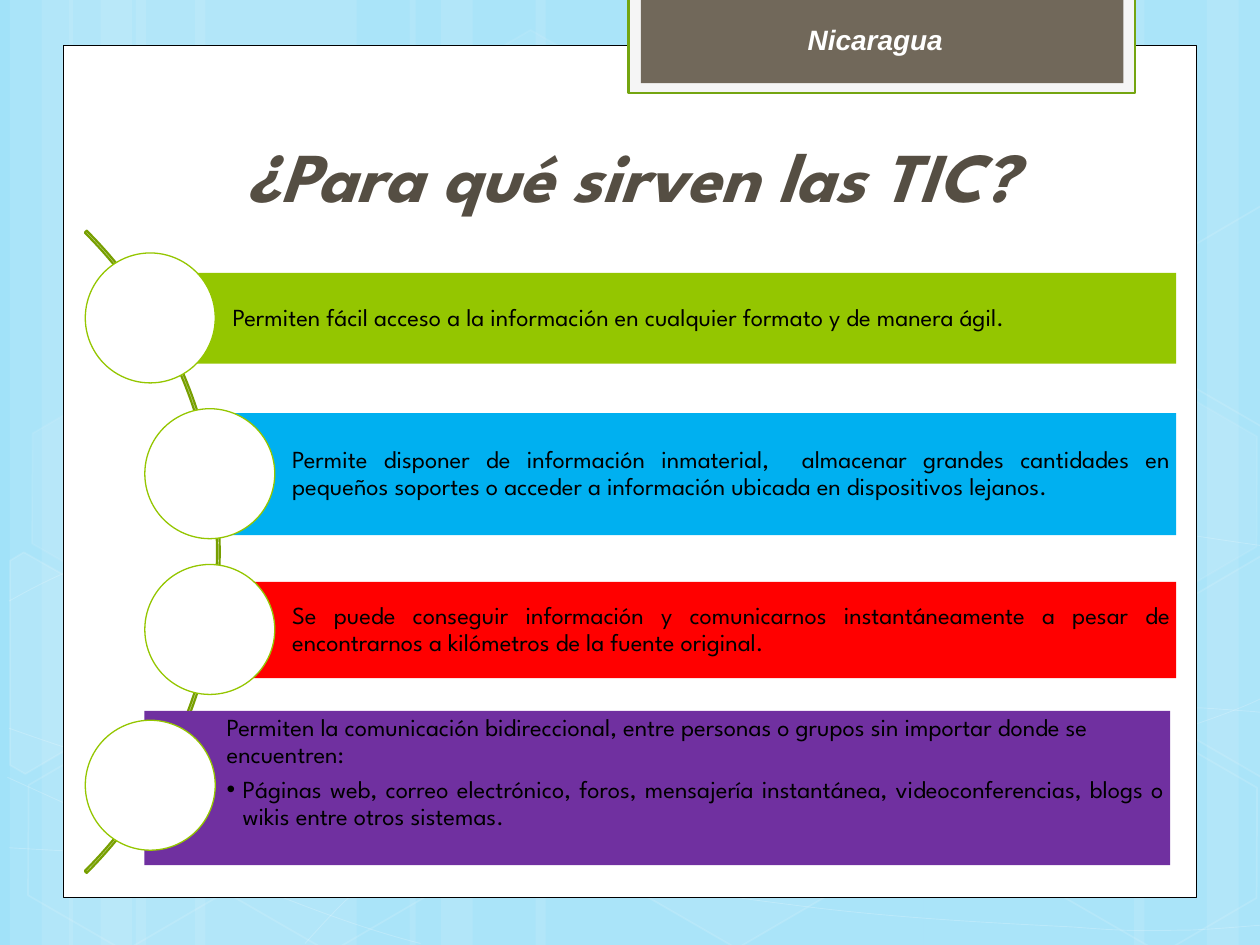
import math

from lxml import etree
from pptx import Presentation
from pptx import util as u
from pptx.dml.color import RGBColor
from pptx.enum import shapes, text
from pptx.oxml import ns

Cm, Pt = u.Cm, u.Pt
MSO, AL, ANC = shapes.MSO_SHAPE, text.PP_ALIGN, text.MSO_ANCHOR

COLORS = {
    "sky": "A1E2F9", "white": "FFFFFF", "black": "000000", "frame": "F5F5F5",
    "leaf": "74A510", "taupe": "71685A", "title": "554E43", "arc": "779F00",
    "green": "94C600", "blue": "00B0F0", "red": "FF0000", "purple": "7030A0",
}

STRIPES = [(x + dx, w) for dx in (0, 1.19)
           for x, w in ((2.74, 4.45), (0.2, 1.27), (0.84, 2.11))]
STRIPES += [(18.62, 4.45), (24.33, 1.27), (22.86, 2.11),
            (10.8, 7.82), (8.26, 1.27), (8.89, 2.11)]

CURVES = [
    [(0.18, 17.09), (1.55, 17.17), (2.92, 17.25), (4.83, 17.22), (6.73, 17.2),
     (9.09, 17.15), (11.63, 16.89), (14.17, 16.64), (17.78, 16.15),
     (20.12, 15.67), (22.43, 15.19), (24.82, 14.43), (25.58, 14)],
    [(0.18, 12.12), (0.91, 11.71), (1.65, 11.33), (3.07, 10.95), (4.52, 10.57),
     (6.58, 10.01), (8.81, 9.83), (11.07, 9.65), (13.82, 9.63),
     (16.61, 9.83), (19.41, 10.03), (24.05, 10.82), (25.58, 11.02)],
    [(0.15, 15.67), (3.23, 17.07), (6.27, 18.47), (8.48, 19.02)],
    [(0.18, 14.68), (0.97, 14.96), (1.78, 15.24), (3.25, 15.65), (4.72, 16.03),
     (6.93, 16.66), (9.07, 17.09), (11.18, 17.53), (13.84, 17.98),
     (15.95, 18.24), (18.06, 18.52), (20.32, 18.62), (21.67, 18.69),
     (22.99, 18.8), (23.34, 18.75), (24, 18.75), (24.66, 18.72),
     (25.12, 18.67), (25.58, 18.64)],
    [(6.15, 19.02), (6.6, 18.52), (7.06, 18.01), (7.67, 17.55), (8.28, 17.09),
     (9.14, 16.59), (9.86, 16.23), (10.57, 15.88), (11, 15.72),
     (11.94, 15.47), (12.85, 15.21), (14.55, 14.86), (15.44, 14.68),
     (16.36, 14.5), (16.48, 14.5), (17.27, 14.45), (18.06, 14.38),
     (19.3, 14.3), (20.17, 14.27), (21.06, 14.25), (22.5, 14.27),
     (22.5, 14.27), (23, 14.27), (23.6, 14.27), (24.21, 14.27),
     (24.66, 14.3), (25.1, 14.33), (25.32, 14.35), (25.55, 14.38),
     (25.48, 14.35), (25.55, 14.38)],
]

HEXAGONS = [(8.48, 0.91, 4, 8), (12.62, 14.96, 6, 12), (0.28, 15.01, 0, 12),
            (0.36, 7.92, 7, 8), (4.42, 15.04, 0, 12), (19.13, 11.51, 10, 12),
            (21.18, 15.06, 0, 12), (21.18, 7.98, 7, 8)]

CUT_HEXAGONS = [
    (10, (0.91, 13.59), [(0.2, 11.3), (0.48, 11.13), (2.44, 12.24),
                         (2.41, 14.48), (0.51, 15.6), (0.2, 15.42)]),
    (4, (25.02, 13.21), [(23.52, 12.32), (25.43, 11.2), (25.63, 11.33),
                         (25.63, 15.57), (25.45, 15.67), (23.52, 14.55)]),
    (0, (25.02, 6.12), [(23.52, 5.26), (25.43, 4.14), (25.65, 4.27),
                        (25.63, 8.51), (25.45, 8.61), (23.52, 7.49)]),
]

BARS = [
    ("green", (3.03, 5.5, 20.68, 1.83), 1.72, ANC.MIDDLE, AL.LEFT,
     "Permiten fácil acceso a la información en cualquier formato y de manera ágil."),
    ("blue", (4.23, 8.33, 19.48, 2.46), 2.92, ANC.MIDDLE, AL.JUSTIFY,
     "Permite disponer de información inmaterial,  almacenar grandes cantidades en "
     "pequeños soportes o acceder a información ubicada en dispositivos lejanos."),
    ("red", (4.23, 11.73, 19.48, 1.94), 2.92, ANC.MIDDLE, AL.JUSTIFY,
     "Se puede conseguir información y comunicarnos instantáneamente a pesar de "
     "encontrarnos a kilómetros de la fuente original."),
    ("purple", (2.91, 14.33, 20.68, 3.11), 1.72, ANC.TOP, AL.LEFT,
     "Permiten la comunicación bidireccional, entre personas o grupos sin importar "
     "donde se encuentren:"),
]
CHANNELS = ("Páginas web, correo electrónico, foros, mensajería instantánea, "
            "videoconferencias, blogs o wikis entre otros sistemas.")


def paint(fmt, color, alpha=100):
    """Give a fill format a solid colour with an opacity in percent."""
    fmt.solid()
    fmt.fore_color.rgb = RGBColor.from_string(COLORS[color])
    if alpha < 100:
        clr = fmt._xPr.find(ns.qn("a:solidFill"))[0]
        etree.SubElement(clr, ns.qn("a:alpha"), val=str(alpha * 1000))


def style(sp, fill=None, line=None, width=1, alpha=100, line_alpha=100):
    """Set fill and line of a shape and switch its shadow off."""
    sp.shadow.inherit = False
    for fmt, color, a in ((sp.fill, fill, alpha), (sp.line.fill, line, line_alpha)):
        if color and a:
            paint(fmt, color, a)
        else:
            fmt.background()
    if line:
        sp.line.width = Pt(width)
    return sp


def add_shape(s, kind, box, **look):
    """Add a preset shape in a box given in centimetres."""
    return style(s.shapes.add_shape(kind, *map(Cm, box)), **look)


def add_outline(s, points, closed, **look):
    """Add a freeform through points given in centimetres."""
    pts = [(Cm(x), Cm(y)) for x, y in points]
    fb = s.shapes.build_freeform(*pts[0], scale=1.0)
    fb.add_line_segments(pts[1:], close=closed)
    return style(fb.convert_to_shape(), **look)


def add_curve(s, nodes, **look):
    """Add a chain of cubic curves through nodes and their handles."""
    sp = add_outline(s, nodes, False, **look)
    lines = list(sp.element.iter(ns.qn("a:lnTo")))
    for i in range(0, len(lines), 3):
        curve = etree.Element(ns.qn("a:cubicBezTo"))
        lines[i].addprevious(curve)
        for ln in lines[i:i + 3]:
            curve.append(ln[0])
            ln.getparent().remove(ln)


def turn(points, center, degrees):
    """Rotate points about a center."""
    c, d = math.cos(math.radians(degrees)), math.sin(math.radians(degrees))
    cx, cy = center
    return [(cx + (x - cx) * c - (y - cy) * d, cy + (x - cx) * d + (y - cy) * c)
            for x, y in points]


def write(tf, content, size=14, font="League Spartan", color="black", bold=False,
          align=AL.LEFT, spacing=1.0, after=0, bullet=None, new=False):
    """Write one formatted paragraph into a text frame."""
    p = tf.add_paragraph() if new else tf.paragraphs[0]
    p.alignment, p.line_spacing, p.space_after = align, spacing, Pt(after)
    p.space_before = Pt(0)
    if bullet:
        p.level = 1
        pPr = p._p.get_or_add_pPr()
        pPr.set("marL", str(Cm(0.32)))
        pPr.set("indent", str(-Cm(0.32)))
        etree.SubElement(pPr, ns.qn("a:buFont"), typeface="Arial")
        etree.SubElement(pPr, ns.qn("a:buChar"), char=bullet)
    r = p.add_run()
    r.text = content
    r.font.size, r.font.name = Pt(size), font
    r.font.bold = r.font.italic = bold
    r.font.color.rgb = RGBColor.from_string(COLORS[color])


def add_backdrop(s):
    """Draw the sky with its stripes, curves and hexagons."""
    paint(s.background.fill, "sky")
    for x, w in STRIPES:
        add_shape(s, MSO.RECTANGLE, (x, 0, w, 19.05), fill="white", alpha=10)
    for nodes in CURVES:
        add_curve(s, nodes, line="white", width=0.5, line_alpha=20)
    for x, y, alpha, line_alpha in HEXAGONS:
        sp = add_shape(s, MSO.HEXAGON, (x, y, 4.45, 3.86), fill="white",
                       alpha=alpha, line="white", line_alpha=line_alpha)
        sp.adjustments[0] = 0.285
        sp.rotation = 30
    for alpha, center, points in CUT_HEXAGONS:
        sp = add_outline(s, turn(points, center, -30), True, fill="white",
                         alpha=alpha, line="white", line_alpha=12)
        sp.rotation = 30


def add_panel(s):
    """Draw the white panel and the tab at its top."""
    add_shape(s, MSO.RECTANGLE, (1.27, 0.91, 22.86, 17.19),
              fill="white", line="black", width=0.5)
    add_shape(s, MSO.RECTANGLE, (12.67, -0.05, 10.21, 1.93),
              fill="frame", line="leaf", width=1.25)
    add_shape(s, MSO.RECTANGLE, (12.92, -0.05, 9.73, 1.73), fill="taupe")


def add_title(s):
    """Place the title above the panel."""
    sp = s.shapes.title
    s.shapes.element.append(sp.element)
    sp.left, sp.top, sp.width, sp.height = map(Cm, (1.3, 1.93, 22.86, 2.57))
    tf = sp.text_frame
    tf.auto_size, tf.vertical_anchor = text.MSO_AUTO_SIZE.NONE, ANC.BOTTOM
    write(tf, "¿Para qué sirven las TIC?", size=40, color="title", bold=True,
          align=AL.CENTER, spacing=1.15, after=10)


def add_bars(s):
    """Draw the arc and the four bars with their circles."""
    arc = add_shape(s, MSO.BLOCK_ARC, (-13.88, 1.97, 18.31, 18.31),
                    line="arc", width=1.25)
    for i, value in enumerate((189, 27, 0.003)):
        arc.adjustments[i] = value
    for i, (color, box, circle_x, anchor, align, content) in enumerate(BARS):
        tf = add_shape(s, MSO.RECTANGLE, box, fill=color).text_frame
        tf.word_wrap, tf.vertical_anchor = True, anchor
        tf.margin_left = Cm(1.66)
        tf.margin_top = tf.margin_right = tf.margin_bottom = Cm(0.1)
        write(tf, content, align=align, spacing=0.9, after=4.9)
        if color == "purple":
            write(tf, CHANNELS, align=AL.JUSTIFY, spacing=0.9, after=2.1,
                  bullet="•", new=True)
        add_shape(s, MSO.OVAL, (circle_x, 5.1 + 3.14 * i, 2.62, 2.62),
                  fill="white", line="green", width=0.75)


def add_label(s):
    """Write the country on the tab."""
    tf = s.shapes.add_textbox(*map(Cm, (13.49, 0.33, 8.31, 0.94))).text_frame
    tf.word_wrap = True
    write(tf, "Nicaragua", size=16, font="Arial", color="white", bold=True,
          align=AL.CENTER)


def main():
    """Build the slide and save it."""
    prs = Presentation()
    prs.slide_width, prs.slide_height = Cm(25.4), Cm(19.05)
    s = prs.slides.add_slide(prs.slide_layouts[5])
    for add in (add_backdrop, add_panel, add_title, add_bars, add_label):
        add(s)
    prs.save("out.pptx")


if __name__ == "__main__":
    main()
